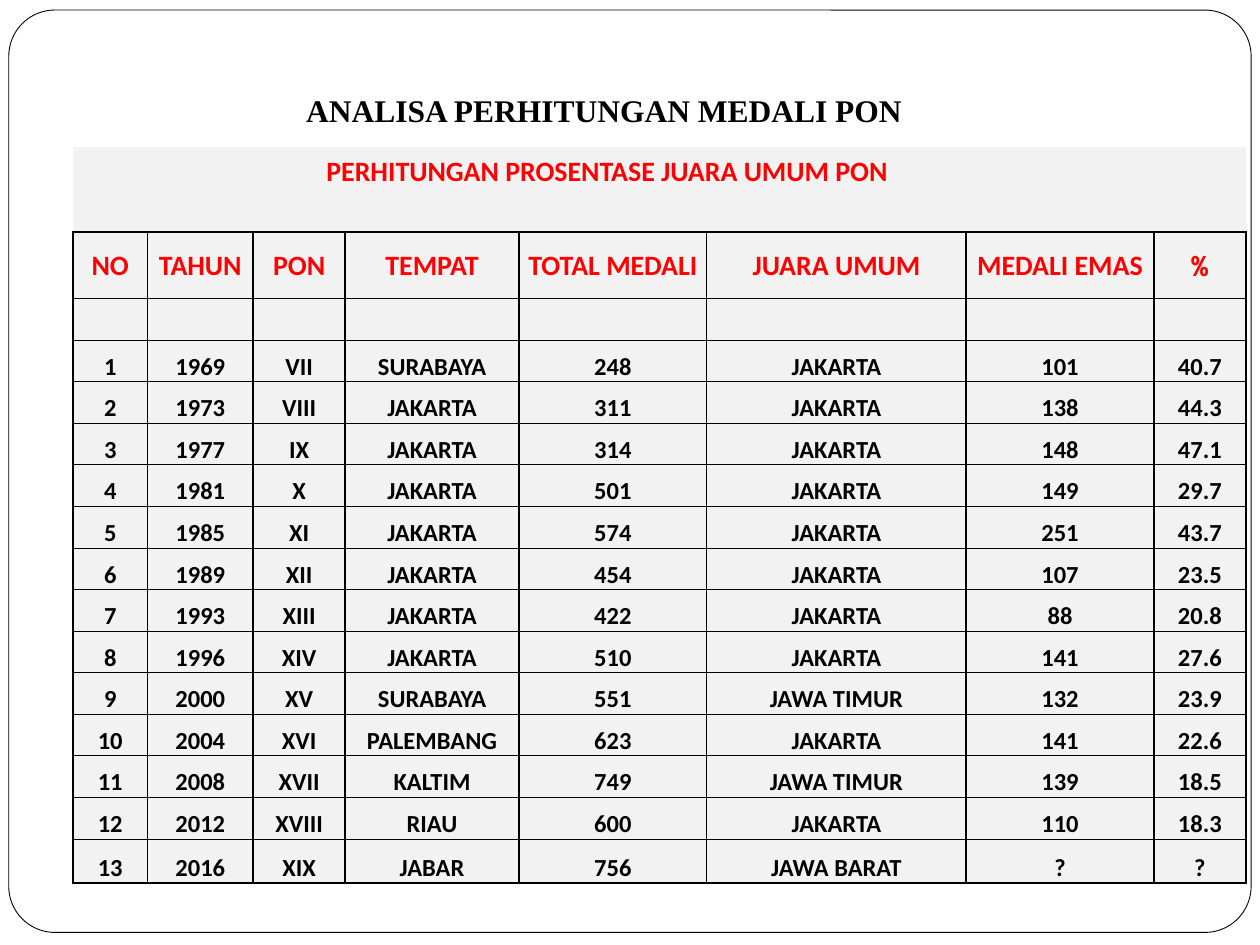
from lxml.etree import SubElement
from pptx import Presentation
from pptx.dml.color import RGBColor
from pptx.enum.shapes import MSO_SHAPE
from pptx.enum.text import MSO_ANCHOR, PP_ALIGN
from pptx.oxml.ns import qn
from pptx.util import Inches, Pt

BLACK = RGBColor(0, 0, 0)
WHITE = RGBColor(255, 255, 255)
RED = RGBColor(255, 0, 0)
GREY = RGBColor(242, 242, 242)

PLAIN = "{2D5ABB26-0587-4C30-8999-92F81FD0307C}"
COLS = [0.59, 0.84, 0.73, 1.38, 1.49, 1.6, 1.49, 0.73]
ROWS = [0.33, 0.34, 0.53] + [0.33] * 13 + [0.35]
HEAD = ["NO", "TAHUN", "PON", "TEMPAT", "TOTAL MEDALI", "JUARA UMUM",
        "MEDALI EMAS", "%"]
GAMES = [
    ("1969", "VII", "SURABAYA", "248", "JAKARTA", "101", "40.7"),
    ("1973", "VIII", "JAKARTA", "311", "JAKARTA", "138", "44.3"),
    ("1977", "IX", "JAKARTA", "314", "JAKARTA", "148", "47.1"),
    ("1981", "X", "JAKARTA", "501", "JAKARTA", "149", "29.7"),
    ("1985", "XI", "JAKARTA", "574", "JAKARTA", "251", "43.7"),
    ("1989", "XII", "JAKARTA", "454", "JAKARTA", "107", "23.5"),
    ("1993", "XIII", "JAKARTA", "422", "JAKARTA", "88", "20.8"),
    ("1996", "XIV", "JAKARTA", "510", "JAKARTA", "141", "27.6"),
    ("2000", "XV", "SURABAYA", "551", "JAWA TIMUR", "132", "23.9"),
    ("2004", "XVI", "PALEMBANG", "623", "JAKARTA", "141", "22.6"),
    ("2008", "XVII", "KALTIM", "749", "JAWA TIMUR", "139", "18.5"),
    ("2012", "XVIII", "RIAU", "600", "JAKARTA", "110", "18.3"),
    ("2016", "XIX", "JABAR", "756", "JAWA BARAT", "?", "?"),
]


def set_font(para, size, color, face="Calibri"):
    font = para.font
    font.name = face
    font.size = Pt(size)
    font.bold = True
    font.color.rgb = color


def add_frame(slide):
    frame = slide.shapes.add_shape(
        MSO_SHAPE.ROUNDED_RECTANGLE,
        Inches(0.07), Inches(0.08), Inches(9.86), Inches(7.32))
    frame.adjustments[0] = 0.05
    frame.shadow.inherit = False
    frame.fill.solid()
    frame.fill.fore_color.rgb = WHITE
    frame.line.color.rgb = BLACK
    frame.line.width = Pt(0.5)


def add_edge(cell, side, width):
    props = cell._tc.get_or_add_tcPr()
    edge = SubElement(props, qn(f"a:ln{side}"), w=str(Pt(width)))
    fill = SubElement(edge, qn("a:solidFill"))
    SubElement(fill, qn("a:srgbClr"), val=str(BLACK))


def style_cell(cell, row):
    cell.margin_left = cell.margin_right = cell.margin_top = Inches(0.01)
    cell.margin_bottom = 0
    if row > 1:
        add_edge(cell, "L", 1)
        add_edge(cell, "R", 1)
        add_edge(cell, "T", 1 if row < 4 and row != 4 else 0.5)
    if row > 0:
        last = len(ROWS) - 1
        add_edge(cell, "B", 1 if row in (1, 2, last) else 0.5)
    cell.fill.solid()
    cell.fill.fore_color.rgb = GREY


def fill_row(table, row, words, size, color, anchor):
    for col, word in enumerate(words):
        cell = table.cell(row, col)
        cell.text = word
        cell.vertical_anchor = anchor
        para = cell.text_frame.paragraphs[0]
        para.alignment = PP_ALIGN.CENTER
        set_font(para, size, color,
                 "Noto Sans Mono" if word == "%" else "Calibri")


def add_medals(slide):
    shape = slide.shapes.add_table(
        len(ROWS), len(COLS), Inches(0.58), Inches(1.17),
        Inches(sum(COLS)), Inches(sum(ROWS)))
    table = shape.table
    table.first_row = table.horz_banding = False
    next(shape.element.iter(qn("a:tableStyleId"))).text = PLAIN
    for col, width in zip(table.columns, COLS):
        col.width = Inches(width)
    for num, height in enumerate(ROWS):
        table.rows[num].height = Inches(height)
        for cell in table.rows[num].cells:
            style_cell(cell, num)

    label = table.cell(0, 0)
    label.merge(table.cell(0, 5))
    label.text = "PERHITUNGAN PROSENTASE JUARA UMUM PON"
    label.margin_left = Inches(2.01)
    label.vertical_anchor = MSO_ANCHOR.BOTTOM
    set_font(label.text_frame.paragraphs[0], 16, RED)

    fill_row(table, 2, HEAD, 16, RED, MSO_ANCHOR.MIDDLE)
    for num, game in enumerate(GAMES, 1):
        fill_row(table, num + 3, (str(num), *game), 14, BLACK,
                 MSO_ANCHOR.BOTTOM)
    return shape


def set_title(slide, below):
    title = slide.shapes.title
    title.left, title.top = Inches(2.33), Inches(0.67)
    title.width, title.height = Inches(5.25), Inches(0.4)
    title.text = "ANALISA PERHITUNGAN MEDALI PON"
    title.text_frame.vertical_anchor = MSO_ANCHOR.TOP
    para = title.text_frame.paragraphs[0]
    para.alignment = PP_ALIGN.LEFT
    set_font(para, 18, BLACK, "Times New Roman")
    below.element.addnext(title.element)


def main():
    deck = Presentation()
    deck.slide_width, deck.slide_height = Inches(10), Inches(7.5)
    slide = deck.slides.add_slide(deck.slide_layouts[5])
    add_frame(slide)
    medals = add_medals(slide)
    set_title(slide, medals)
    deck.save("out.pptx")


if __name__ == "__main__":
    main()
